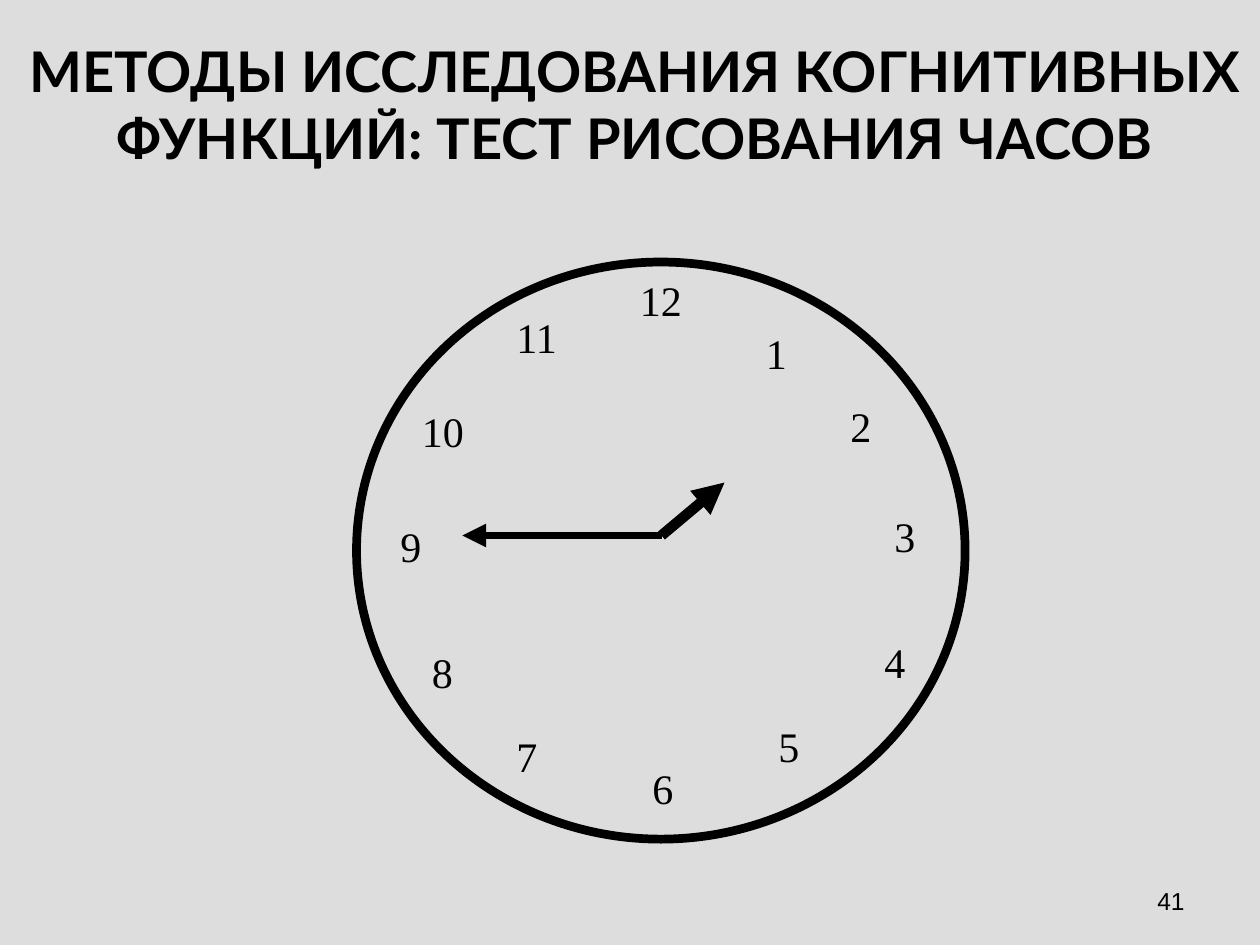
from dataclasses import dataclass

from lxml import etree
from pptx import Presentation
from pptx import util as u
from pptx.dml.color import RGBColor
from pptx.enum import shapes, text
from pptx.oxml.ns import qn


@dataclass(frozen=True)
class Theme:
    ink: RGBColor = RGBColor(0, 0, 0)
    paper: RGBColor = RGBColor(0xDD, 0xDD, 0xDD)
    title_font: str = "Lato"
    title_size: int = 32
    numeral_font: str = "Times New Roman"
    numeral_size: int = 24
    number_font: str = "Arial"
    number_size: int = 14
    rim_width: float = 5
    minute_width: float = 4.5
    hour_width: float = 6


THEME = Theme()

NUMERAL_OFFSETS = {
    12: (2.15, 0.05), 1: (3.15, 0.47), 2: (3.82, 1.05), 3: (4.17, 1.92),
    4: (4.09, 2.92), 5: (3.25, 3.59), 6: (2.25, 3.92), 7: (1.17, 3.67),
    8: (0.5, 3), 9: (0.25, 2), 10: (0.42, 1.09), 11: (1.17, 0.34),
}


def add_text(page, area, words, font, size, align=text.PP_ALIGN.LEFT,
             anchor=text.MSO_ANCHOR.TOP, bold=False, wrap=True):
    box = page.shapes.add_textbox(*map(u.Inches, area))
    frame = box.text_frame
    frame.text = words
    frame.word_wrap = wrap
    frame.vertical_anchor = anchor
    if not wrap:
        frame.auto_size = text.MSO_AUTO_SIZE.SHAPE_TO_FIT_TEXT
    para = frame.paragraphs[0]
    para.alignment = align
    span = para.runs[0]
    span.font.name = font
    span.font.size = u.Pt(size)
    span.font.bold = bold
    span.font.color.rgb = THEME.ink


def add_hand(page, start, end, width):
    hand = page.shapes.add_connector(
        shapes.MSO_CONNECTOR.STRAIGHT, *map(u.Inches, (*start, *end)))
    hand.line.color.rgb = THEME.ink
    hand.line.width = u.Pt(width)
    etree.SubElement(hand.line._get_or_add_ln(), qn("a:tailEnd"), type="triangle")
    etree.SubElement(hand._element.spPr, qn("a:effectLst"))


def add_clock(page, area):
    left, top = area[:2]
    rim = page.shapes.add_shape(shapes.MSO_SHAPE.OVAL, *map(u.Inches, area))
    rim.shadow.inherit = False
    rim.fill.background()
    rim.line.color.rgb = THEME.ink
    rim.line.width = u.Pt(THEME.rim_width)

    for hour, (across, down) in NUMERAL_OFFSETS.items():
        width = 0.53 if hour > 9 else 0.37
        add_text(page, (left + across, top + down, width, 0.5), str(hour),
                 THEME.numeral_font, THEME.numeral_size, wrap=False)

    pivot = (left + 2.42, top + 2.17)
    add_hand(page, pivot, (left + 0.84, top + 2.17), THEME.minute_width)
    add_hand(page, pivot, (left + 2.92, top + 1.75), THEME.hour_width)


def add_title(page, area):
    add_text(page, area,
             "МЕТОДЫ ИССЛЕДОВАНИЯ КОГНИТИВНЫХ ФУНКЦИЙ: ТЕСТ РИСОВАНИЯ ЧАСОВ",
             THEME.title_font, THEME.title_size, text.PP_ALIGN.CENTER,
             text.MSO_ANCHOR.MIDDLE, bold=True)


def add_page_number(page, area):
    add_text(page, area, "41", THEME.number_font, THEME.number_size,
             text.PP_ALIGN.RIGHT, text.MSO_ANCHOR.MIDDLE)


def main():
    deck = Presentation()
    deck.slide_width, deck.slide_height = u.Inches(10), u.Inches(7.5)
    page = deck.slides.add_slide(deck.slide_layouts[6])
    page.background.fill.solid()
    page.background.fill.fore_color.rgb = THEME.paper
    add_page_number(page, (7.17, 6.95, 2.33, 0.4))
    add_clock(page, (2.83, 2.08, 4.83, 4.58))
    add_title(page, (0.04, 0.34, 10, 0.97))
    deck.save("out.pptx")


if __name__ == "__main__":
    main()
